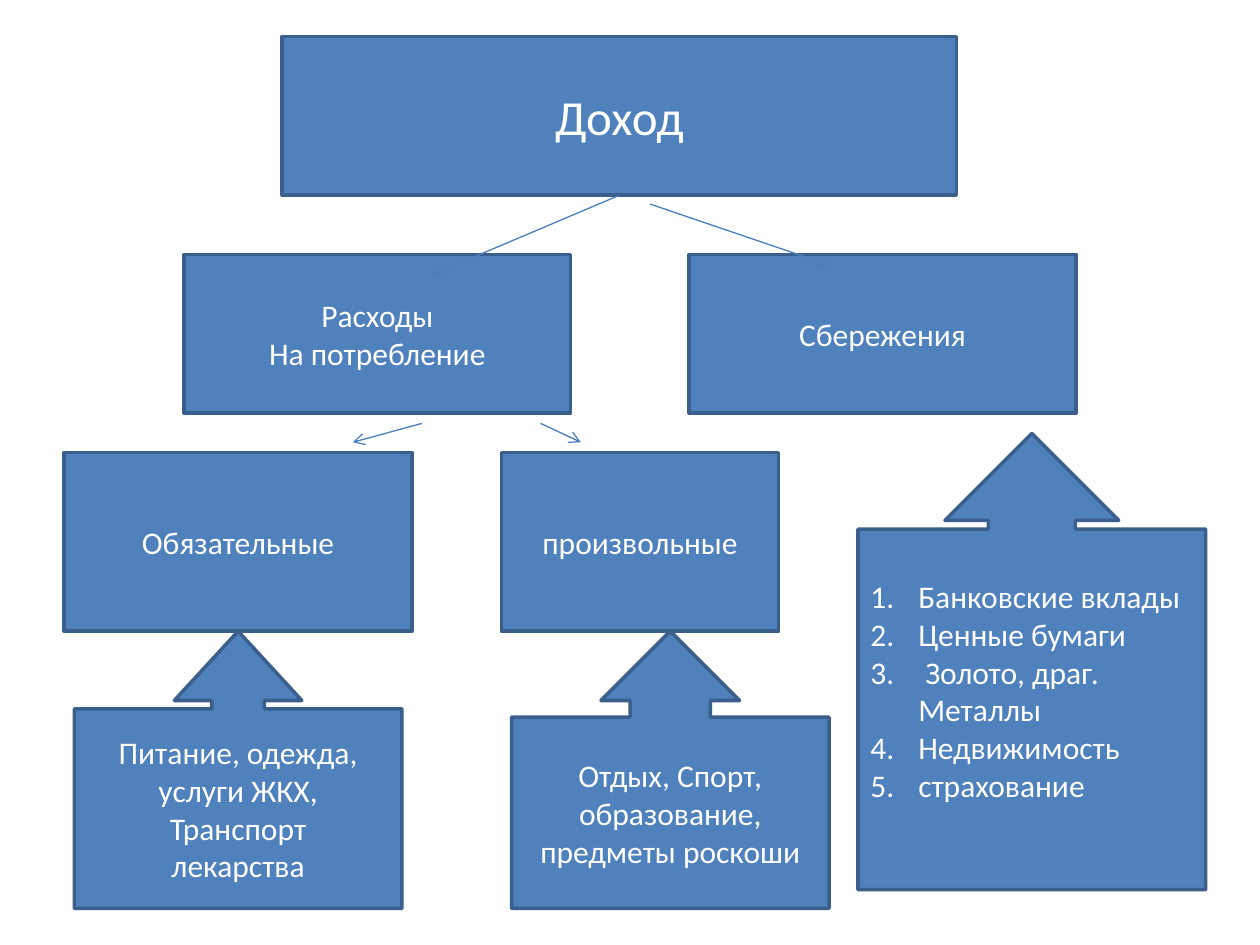
from dataclasses import dataclass

from lxml import etree
from pptx import Presentation
from pptx.dml.color import RGBColor
from pptx.enum.shapes import MSO_CONNECTOR, MSO_SHAPE
from pptx.enum.text import MSO_ANCHOR, PP_ALIGN
from pptx.oxml.ns import qn
from pptx.shapes.autoshape import Shape
from pptx.slide import Slide
from pptx.util import Inches, Pt

RECT = MSO_SHAPE.RECTANGLE
CALLOUT = MSO_SHAPE.UP_ARROW_CALLOUT
STRAIGHT = MSO_CONNECTOR.STRAIGHT
MIDDLE = MSO_ANCHOR.MIDDLE
CENTER, LEFT = PP_ALIGN.CENTER, PP_ALIGN.LEFT
BOTTOM = 2


@dataclass(frozen=True)
class Theme:
    fill: RGBColor = RGBColor(0x4F, 0x81, 0xBD)
    edge: RGBColor = RGBColor(0x3A, 0x5F, 0x8C)
    arrow: RGBColor = RGBColor(0x4B, 0x7E, 0xBC)
    text: RGBColor = RGBColor(0xFF, 0xFF, 0xFF)
    font: str = "Calibri"
    head: int = 28
    body: int = 18
    border: float = 2
    thin: float = 0.75


THEME = Theme()


@dataclass(frozen=True)
class Box:
    left: float
    top: float
    width: float
    height: float
    lines: tuple[str, ...]
    size: int = THEME.body
    adjust: tuple[float, ...] = ()
    listed: bool = False


@dataclass(frozen=True)
class Arrow:
    start: tuple[float, float]
    end: tuple[float, float]


INCOME = Box(2.24, 0.29, 5.35, 1.26, ("Доход",), THEME.head)
PARTS = (
    Box(5.47, 2.02, 3.07, 1.26, ("Сбережения",)),
    Box(1.46, 2.02, 3.07, 1.26, ("Расходы", "На потребление")),
)
KINDS = (
    Box(0.51, 3.59, 2.76, 1.42, ("Обязательные",)),
    Box(3.98, 3.59, 2.2, 1.42, ("произвольные",)),
)
DETAILS = (
    Box(0.59, 5.01, 2.6, 2.2,
        ("Питание, одежда, услуги ЖКХ,", "Транспорт", "лекарства"),
        adjust=(0.19, 0.23, 0.25, 0.72)),
    Box(4.06, 5.01, 2.52, 2.2,
        ("Отдых, Спорт, образование,", "предметы роскоши"),
        adjust=(0.29, 0.25, 0.25, 0.69)),
    Box(6.81, 3.44, 2.76, 3.62,
        ("Банковские вклады", "Ценные бумаги", " Золото, драг. Металлы",
         "Недвижимость", "страхование"),
        adjust=(0.25, 0.25, 0.25, 0.79), listed=True),
)
SPEND = Arrow((4.92, 1.55), (3.43, 2.18))
SAVE = Arrow((5.16, 1.62), (6.57, 2.1))
SPLITS = (
    Arrow((3.35, 3.36), (2.8, 3.51)),
    Arrow((4.29, 3.36), (4.61, 3.51)),
)


def number(para) -> None:
    """Give a paragraph an automatic number and a hanging indent."""
    props = para._p.get_or_add_pPr()
    indent = Inches(0.38)
    props.set("marL", str(indent))
    props.set("indent", str(-indent))
    etree.SubElement(props, qn("a:buAutoNum"), type="arabicPeriod")


def write(shape: Shape, box: Box) -> None:
    frame = shape.text_frame
    frame.word_wrap = True
    frame.vertical_anchor = MIDDLE
    if box.listed:
        frame.margin_bottom = Inches(0.35)
    for i, line in enumerate(box.lines):
        para = frame.add_paragraph() if i else frame.paragraphs[0]
        para.alignment = LEFT if box.listed else CENTER
        if box.listed:
            number(para)
        run = para.add_run()
        run.text = line
        run.font.name = THEME.font
        run.font.size = Pt(box.size)
        run.font.color.rgb = THEME.text


def draw_box(slide: Slide, box: Box) -> Shape:
    shape = slide.shapes.add_shape(
        CALLOUT if box.adjust else RECT,
        Inches(box.left), Inches(box.top),
        Inches(box.width), Inches(box.height))
    for i, value in enumerate(box.adjust):
        shape.adjustments[i] = value
    shape.shadow.inherit = False
    shape.fill.solid()
    shape.fill.fore_color.rgb = THEME.fill
    shape.line.color.rgb = THEME.edge
    shape.line.width = Pt(THEME.border)
    write(shape, box)
    return shape


def draw_arrow(slide: Slide, arrow: Arrow, source: Shape | None = None) -> None:
    """Draw an arrow, joined to the bottom of source if one is given."""
    ends = [Inches(v) for v in arrow.start + arrow.end]
    line = slide.shapes.add_connector(STRAIGHT, *ends)
    if source is not None:
        line.begin_connect(source, BOTTOM)
    line.line.color.rgb = THEME.arrow
    line.line.width = Pt(THEME.thin)
    etree.SubElement(line.line._get_or_add_ln(), qn("a:tailEnd"), type="arrow")
    etree.SubElement(line._element.spPr, qn("a:effectLst"))


def main() -> None:
    deck = Presentation()
    deck.slide_width, deck.slide_height = Inches(10), Inches(7.5)
    slide = deck.slides.add_slide(deck.slide_layouts.get_by_name("Blank"))
    income = draw_box(slide, INCOME)
    for box in PARTS:
        draw_box(slide, box)
    draw_arrow(slide, SPEND, income)
    draw_arrow(slide, SAVE)
    for box in KINDS + DETAILS:
        draw_box(slide, box)
    for arrow in SPLITS:
        draw_arrow(slide, arrow)
    deck.save("out.pptx")


if __name__ == "__main__":
    main()
